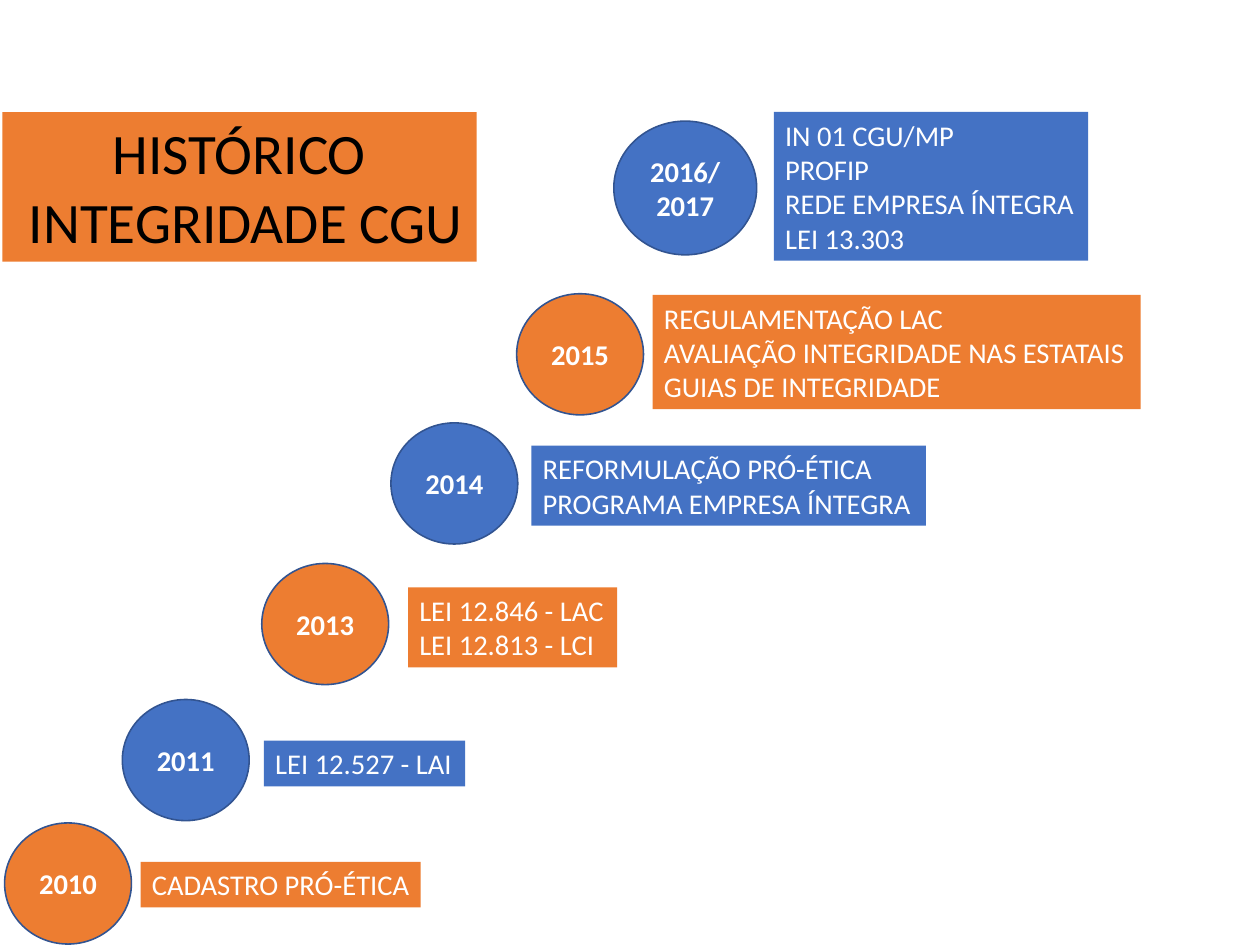
from collections import namedtuple

from pptx import Presentation
from pptx.dml.color import RGBColor
from pptx.enum.shapes import MSO_SHAPE
from pptx.enum.text import MSO_ANCHOR, MSO_AUTO_SIZE, PP_ALIGN
from pptx.util import Inches, Pt

FONT = "Calibri"
ORANGE, BLUE, OUTLINE = "ED7D31", "4472C4", "325491"
BLACK, WHITE = "000000", "FFFFFF"
CM_PER_INCH = 2.54
PAGE_WIDTH, PAGE_HEIGHT = 28 / CM_PER_INCH, 21 / CM_PER_INCH
LINE_HEIGHT, LABEL_PADDING = 0.3, 0.1

Box = namedtuple("Box", "left top width height")
# gap: circle to label; drop: top of circle to top of label
Milestone = namedtuple("Milestone", "year circle gap drop label_width lines")

MILESTONES = [
    Milestone("2010", Box(0.04, 7.2, 1.11, 1.06), 0.08, 0.34, 2.45,
              ["CADASTRO PRÓ-ÉTICA"]),
    Milestone("2011", Box(1.07, 6.12, 1.11, 1.06), 0.13, 0.36, 1.76,
              ["LEI 12.527 - LAI"]),
    Milestone("2013", Box(2.29, 4.93, 1.11, 1.06), 0.17, 0.21, 1.83,
              ["LEI 12.846 - LAC", "LEI 12.813 - LCI"]),
    Milestone("2014", Box(3.42, 3.7, 1.11, 1.06), 0.12, 0.2, 3.45,
              ["REFORMULAÇÃO PRÓ-ÉTICA", "PROGRAMA EMPRESA ÍNTEGRA"]),
    Milestone("2015", Box(4.52, 2.57, 1.11, 1.06), 0.08, 0.01, 4.27,
              ["REGULAMENTAÇÃO LAC", "AVALIAÇÃO INTEGRIDADE NAS ESTATAIS",
               "GUIAS DE INTEGRIDADE"]),
    Milestone("2016/2017", Box(5.37, 1.06, 1.25, 1.17), 0.15, -0.08, 2.75,
              ["IN 01 CGU/MP", "PROFIP", "REDE EMPRESA ÍNTEGRA", "LEI 13.303"]),
]


def color(hex_code):
    return RGBColor.from_string(hex_code)


def inches(box):
    return [Inches(length) for length in box]


def paint(shape, fill):
    shape.fill.solid()
    shape.fill.fore_color.rgb = color(fill)


def write(shape, lines, size, ink, align, bold=False):
    frame = shape.text_frame
    frame.text = "\n".join(lines)
    for para in frame.paragraphs:
        para.alignment = align
        for span in para.runs:
            span.font.name = FONT
            span.font.size = Pt(size)
            span.font.bold = bold
            span.font.color.rgb = color(ink)


def add_title(page, box):
    title = page.shapes.title
    title.left, title.top, title.width, title.height = inches(box)
    paint(title, ORANGE)
    write(title, ["HISTÓRICO", " INTEGRIDADE CGU"], 36, BLACK, PP_ALIGN.CENTER)
    title.text_frame.word_wrap = False
    title.text_frame.auto_size = MSO_AUTO_SIZE.NONE
    title.text_frame.vertical_anchor = MSO_ANCHOR.TOP


def add_year_circle(page, box, year, fill):
    circle = page.shapes.add_shape(MSO_SHAPE.OVAL, *inches(box))
    circle.shadow.inherit = False
    paint(circle, fill)
    circle.line.color.rgb = color(OUTLINE)
    circle.line.width = Pt(1)
    write(circle, [year], 18, WHITE, PP_ALIGN.CENTER, bold=True)
    circle.text_frame.word_wrap = True
    circle.text_frame.vertical_anchor = MSO_ANCHOR.MIDDLE


def add_label(page, box, lines, fill):
    label = page.shapes.add_textbox(*inches(box))
    paint(label, fill)
    write(label, lines, 18, WHITE, PP_ALIGN.LEFT)
    label.text_frame.word_wrap = False
    label.text_frame.auto_size = MSO_AUTO_SIZE.SHAPE_TO_FIT_TEXT


def add_milestone(page, milestone, fill):
    circle = milestone.circle
    add_year_circle(page, circle, milestone.year, fill)
    label_box = Box(circle.left + circle.width + milestone.gap,
                    circle.top + milestone.drop,
                    milestone.label_width,
                    LABEL_PADDING + LINE_HEIGHT * len(milestone.lines))
    add_label(page, label_box, milestone.lines, fill)


def main():
    deck = Presentation()
    deck.slide_width, deck.slide_height = Inches(PAGE_WIDTH), Inches(PAGE_HEIGHT)
    page = deck.slides.add_slide(deck.slide_layouts.get_by_name("Title Only"))
    add_title(page, Box(0.02, 0.98, 4.15, 1.31))
    for index, milestone in enumerate(MILESTONES):
        add_milestone(page, milestone, (ORANGE, BLUE)[index % 2])
    deck.save("out.pptx")


if __name__ == "__main__":
    main()
